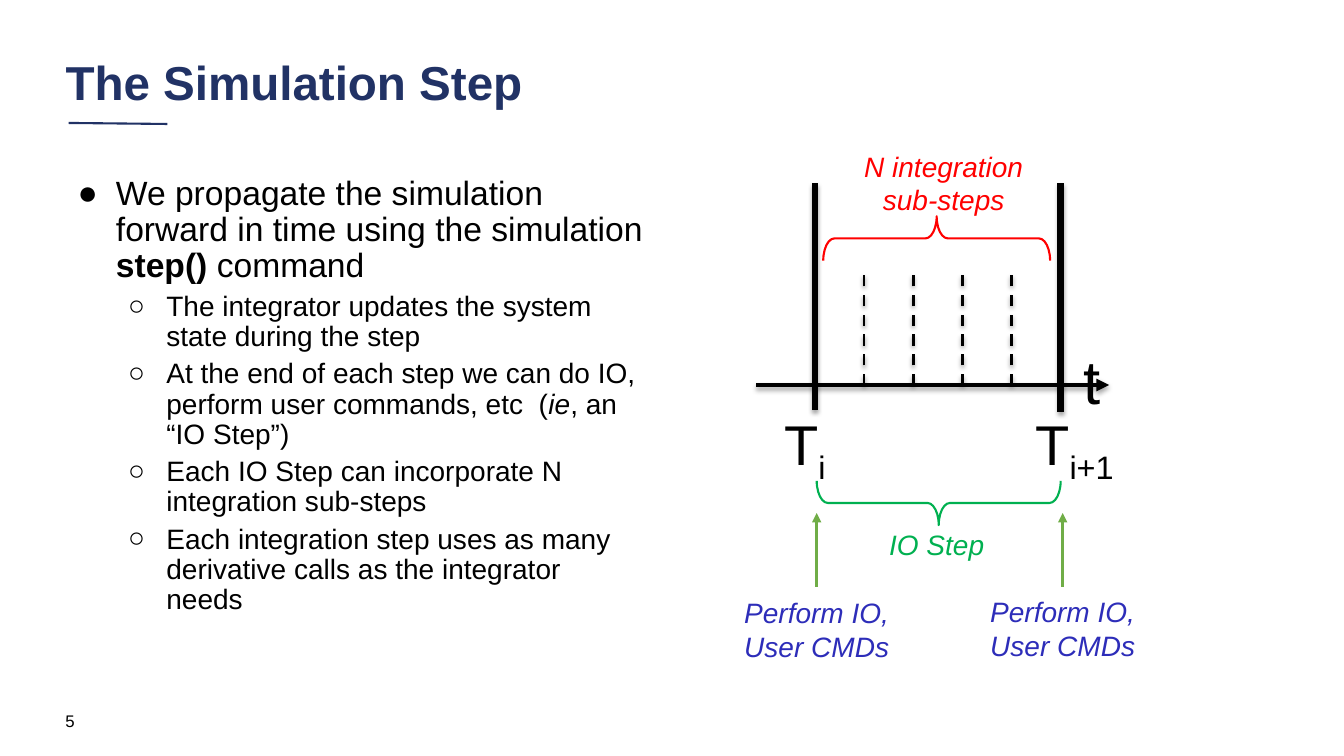
from lxml import etree
from pptx import Presentation
from pptx.dml.color import RGBColor
from pptx.enum import dml, shapes, text
from pptx.oxml import ns
from pptx.util import Inches, Pt

BLACK, NAVY, RED, GREEN = "000000", "213265", "FF0000", "00B050"
LIGHT_GREEN, BLUE = "70AD47", "2D2DB9"
AXIS_Y = 3.82

BULLETS = [
    (0, [("We propagate the simulation forward in time using the simulation ", ""),
         ("step() ", "bold"), ("command", "")]),
    (1, [("The integrator updates the system state during the step", "")]),
    (1, [("At the end of each step we can do IO, perform user commands, etc  (", ""),
         ("ie", "italic"), (", an “IO Step”)", "")]),
    (1, [("Each IO Step can incorporate N integration sub-steps", "")]),
    (1, [("Each integration step uses as many derivative calls as the integrator needs", "")]),
]


def color(value):
    return RGBColor.from_string(value)


def add_xml(parent, tag, **attributes):
    element = etree.SubElement(parent, ns.qn(tag))
    for name, value in attributes.items():
        element.set(name, str(value))
    return element


def format_run(run, size, hex_color, bold=False, italic=False):
    run.font.name = "Arial"
    run.font.size = Pt(size)
    run.font.color.rgb = color(hex_color)
    run.font.bold = bold
    run.font.italic = italic


def place(shape, left, top, width, height):
    shape.left, shape.top = Inches(left), Inches(top)
    shape.width, shape.height = Inches(width), Inches(height)


def add_label(slide, box, wording, size, hex_color=BLACK, italic=False,
              align=text.PP_ALIGN.LEFT, anchor=text.MSO_ANCHOR.TOP):
    shape = slide.shapes.add_textbox(*map(Inches, box))
    frame = shape.text_frame
    frame.text = wording
    frame.word_wrap = True
    frame.vertical_anchor = anchor
    for paragraph in frame.paragraphs:
        paragraph.alignment = align
        for run in paragraph.runs:
            format_run(run, size, hex_color, italic=italic)
    return shape


def add_time_label(slide, left, width, subscript):
    shape = add_label(slide, (left, 4.01, width, 0.77), "T", 40)
    run = shape.text_frame.paragraphs[0].add_run()
    run.text = subscript
    format_run(run, 40, BLACK)
    run.font._element.set("baseline", "-25000")


def add_line(slide, start, end, hex_color, width, arrow=False, dashed=False, shadow=False):
    line = slide.shapes.add_connector(
        shapes.MSO_CONNECTOR.STRAIGHT, *map(Inches, (*start, *end)))
    line.line.color.rgb = color(hex_color)
    line.line.width = Pt(width)
    if dashed:
        line.line.dash_style = dml.MSO_LINE.DASH
    if arrow:
        add_xml(line.line._get_or_add_ln(), "a:tailEnd", type="triangle")
    effects = add_xml(line._element.spPr, "a:effectLst")
    if shadow:
        outer = add_xml(effects, "a:outerShdw", blurRad=Pt(3.1), dist=Pt(1.8),
                        dir=5400000, rotWithShape=0)
        add_xml(add_xml(outer, "a:srgbClr", val=BLACK), "a:alpha", val=35000)


def add_brace(slide, box, rotation, hex_color):
    brace = slide.shapes.add_shape(shapes.MSO_SHAPE.RIGHT_BRACE, *map(Inches, box))
    brace.rotation = rotation
    brace.adjustments[0], brace.adjustments[1] = 0.252, 0.5
    brace.shadow.inherit = False
    brace.fill.background()
    brace.line.color.rgb = color(hex_color)
    brace.line.width = Pt(1.5)


def fill_title(title):
    place(title, 0.55, 0.46, 11.12, 0.76)
    frame = title.text_frame
    frame.text = "The Simulation Step"
    frame.auto_size = text.MSO_AUTO_SIZE.NONE
    frame.vertical_anchor = text.MSO_ANCHOR.MIDDLE
    paragraph = frame.paragraphs[0]
    paragraph.alignment = text.PP_ALIGN.LEFT
    paragraph.line_spacing = 0.9
    format_run(paragraph.runs[0], 34, NAVY, bold=True)


def fill_bullets(body):
    place(body, 0.55, 1.7, 5.93, 4.76)
    frame = body.text_frame
    frame.auto_size = text.MSO_AUTO_SIZE.NONE
    for index, (level, parts) in enumerate(BULLETS):
        paragraph = frame.add_paragraph() if index else frame.paragraphs[0]
        paragraph.level = level
        properties = paragraph._p.get_or_add_pPr()
        properties.set("marL", str(Inches(0.5 + 0.5 * level)))
        properties.set("indent", str(Inches(-0.38)))
        add_xml(add_xml(properties, "a:buClr"), "a:srgbClr", val=BLACK)
        add_xml(properties, "a:buFont", typeface="Arial")
        add_xml(properties, "a:buChar", char="●○"[level])
        paragraph.line_spacing = 0.9
        paragraph.space_before = Pt(5 if index else 0)
        for wording, style in parts:
            run = paragraph.add_run()
            run.text = wording
            format_run(run, 20 if level else 24, BLACK,
                       bold=style == "bold", italic=style == "italic")


def draw_timeline(slide):
    center = text.PP_ALIGN.CENTER
    add_line(slide, (7.5, AXIS_Y), (11, AXIS_Y), BLACK, 3, arrow=True, shadow=True)
    for x, bottom in ((8.08, 4.07), (10.52, 4.09)):
        add_line(slide, (x, bottom), (x, 1.82), BLACK, 4.5, shadow=True)
    for step in range(4):
        x = 8.57 + 0.487 * step
        add_line(slide, (x, AXIS_Y), (x, 2.66), BLACK, 2, dashed=True, shadow=True)
    add_time_label(slide, 7.68, 0.75, "i")
    add_time_label(slide, 10.17, 1.12, "i+1")
    add_label(slide, (10.65, 3.35, 0.69, 0.84), "t", 44)

    add_label(slide, (8.14, 1.43, 2.44, 0.77), "N integration\vsub-steps", 20, RED, True, center)
    add_brace(slide, (9.07, 1.24, 0.44, 2.25), 270, RED)
    add_brace(slide, (9.09, 3.78, 0.44, 2.42), 90, GREEN)
    add_label(slide, (8.65, 5.18, 1.28, 0.44), "IO Step", 20, GREEN, True, center)
    for left, top in ((7.25, 5.86), (9.69, 5.85)):
        add_label(slide, (left, top, 1.7, 0.77), "Perform IO,\nUser CMDs", 20, BLUE, True, center)
        x = left + 0.85
        add_line(slide, (x, 5.82), (x, 5.09), LIGHT_GREEN, 2.25, arrow=True)


def main():
    presentation = Presentation()
    presentation.slide_width = Inches(13.33)
    presentation.slide_height = Inches(7.5)
    slide = presentation.slides.add_slide(presentation.slide_layouts[1])
    add_line(slide, (0.68, 1.22), (1.66, 1.23), NAVY, 1.5)
    add_label(slide, (0.55, 6.95, 3, 0.4), "5", 12, anchor=text.MSO_ANCHOR.MIDDLE)
    fill_title(slide.shapes.title)
    fill_bullets(slide.placeholders[1])
    draw_timeline(slide)
    presentation.save("out.pptx")


if __name__ == "__main__":
    main()
